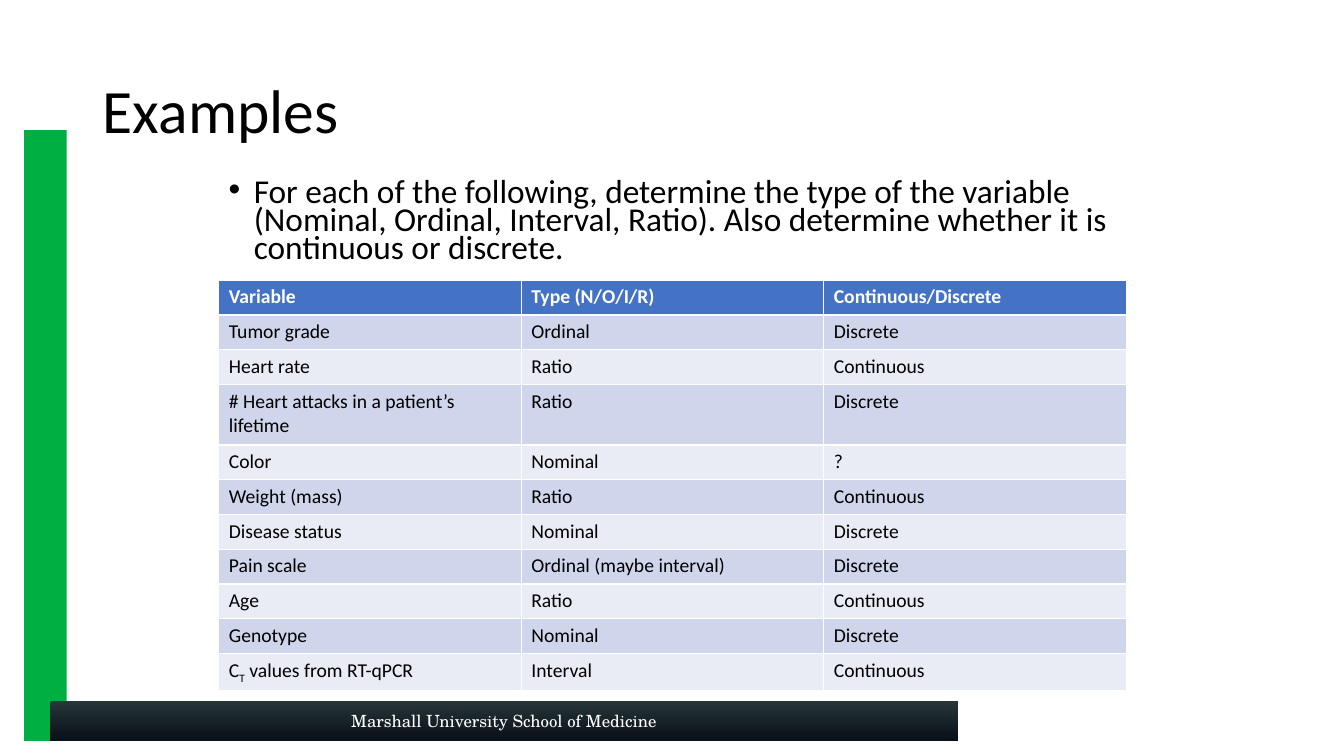
"""Builds the slide of examples of variable types."""
import lxml.etree
import pptx
import pptx.dml.color
import pptx.enum.shapes
import pptx.enum.text
import pptx.oxml.ns
import pptx.util

Inches = pptx.util.Inches
ALIGN = pptx.enum.text.PP_ALIGN
ANCHOR = pptx.enum.text.MSO_ANCHOR

ROWS = [
    ("Variable", "Type (N/O/I/R)", "Continuous/Discrete"),
    ("Tumor grade", "Ordinal", "Discrete"),
    ("Heart rate", "Ratio", "Continuous"),
    ("# Heart attacks in a patient’s lifetime", "Ratio", "Discrete"),
    ("Color", "Nominal", "?"),
    ("Weight (mass)", "Ratio", "Continuous"),
    ("Disease status", "Nominal", "Discrete"),
    ("Pain scale", "Ordinal (maybe interval)", "Discrete"),
    ("Age", "Ratio", "Continuous"),
    ("Genotype", "Nominal", "Discrete"),
    (("C", "T", " values from RT-qPCR"), "Interval", "Continuous"),
]
TALL_ROW = 3


def color(value):
    return pptx.dml.color.RGBColor.from_string(value)


class Page:
    font = "Calibri"
    footer_font = "TeX Gyre Schola"
    ink = "000000"
    light = "FFFFFF"
    header = "4472C4"
    bands = ("E9EBF5", "CFD5EA")

    def __init__(self, deck):
        self.slide = deck.slides.add_slide(deck.slide_layouts[5])
        self.shapes = self.slide.shapes

    def format_runs(self, para, size, ink, font=None, bold=False):
        for span in para.runs:
            span.font.name = font or self.font
            span.font.size = pptx.util.Pt(size)
            span.font.bold = bold
            span.font.color.rgb = color(ink)

    def title(self, text, left, top, width, height):
        box = self.shapes.title
        box.left, box.top = Inches(left), Inches(top)
        box.width, box.height = Inches(width), Inches(height)
        box.text_frame.text = text
        box.text_frame.vertical_anchor = ANCHOR.MIDDLE
        para = box.text_frame.paragraphs[0]
        para.alignment = ALIGN.LEFT
        para.line_spacing = 0.9
        self.format_runs(para, 44, self.ink)

    def bar(self, left, top, width, height):
        shape = self.shapes.add_shape(
            pptx.enum.shapes.MSO_SHAPE.RECTANGLE,
            Inches(left), Inches(top), Inches(width), Inches(height))
        shape.shadow.inherit = False
        shape.line.fill.background()
        return shape

    def solid_bar(self, fill, *place):
        shape = self.bar(*place)
        shape.fill.solid()
        shape.fill.fore_color.rgb = color(fill)

    def footer(self, text, stops, *place):
        shape = self.bar(*place)
        shape.fill.gradient()
        shape.fill.gradient_angle = 270
        for stop, value in zip(shape.fill.gradient_stops, stops):
            stop.color.rgb = color(value)
        shape.text_frame.text = text
        shape.text_frame.vertical_anchor = ANCHOR.MIDDLE
        para = shape.text_frame.paragraphs[0]
        para.alignment = ALIGN.CENTER
        self.format_runs(para, 12, self.light, self.footer_font)

    def bullet(self, text, left, top, width, height):
        box = self.shapes.add_textbox(
            Inches(left), Inches(top), Inches(width), Inches(height))
        box.text_frame.word_wrap = True
        box.text_frame.text = text
        para = box.text_frame.paragraphs[0]
        para.line_spacing = 0.7
        settings = para._p.get_or_add_pPr()
        settings.set("marL", str(Inches(0.25)))
        settings.set("indent", str(-Inches(0.25)))
        for tag, name, value in (("a:buFont", "typeface", "Arial"),
                                 ("a:buChar", "char", "•")):
            lxml.etree.SubElement(settings, pptx.oxml.ns.qn(tag)).set(name, value)
        self.format_runs(para, 23.8, self.ink)

    def cell(self, cell, content, fill, ink, bold):
        cell.fill.solid()
        cell.fill.fore_color.rgb = color(fill)
        para = cell.text_frame.paragraphs[0]
        if isinstance(content, str):
            para.text = content
        else:
            for part in content:
                para.add_run().text = part
            para.runs[1]._r.get_or_add_rPr().set("baseline", "-25000")
        self.format_runs(para, 14, ink, bold=bold)

    def table(self, rows, left, top, width, height):
        table = self.shapes.add_table(
            len(rows), len(rows[0]),
            Inches(left), Inches(top), Inches(width), Inches(height)).table
        for index, row in enumerate(rows):
            table.rows[index].height = Inches(0.6 if index == TALL_ROW else 0.345)
            is_header = index == 0
            fill = self.header if is_header else self.bands[index % 2]
            ink = self.light if is_header else self.ink
            for column, content in enumerate(row):
                self.cell(table.cell(index, column), content, fill, ink, is_header)


def main():
    deck = pptx.Presentation()
    deck.slide_width, deck.slide_height = Inches(13.33), Inches(7.5)
    page = Page(deck)
    page.solid_bar("00AF41", 0.24, 1.29, 0.42, 6.06)
    page.title("Examples", 0.92, 0.4, 11.5, 1.45)
    page.bullet(
        "For each of the following, determine the type of the variable "
        "(Nominal, Ordinal, Interval, Ratio). Also determine whether it is "
        "continuous or discrete.", 2.17, 1.75, 9, 0.99)
    page.footer("Marshall University School of Medicine",
                ("283639", "081018"), 0.5, 6.95, 9, 0.4)
    page.table(ROWS, 2.17, 2.78, 9, 4.05)
    deck.save("out.pptx")


if __name__ == "__main__":
    main()
